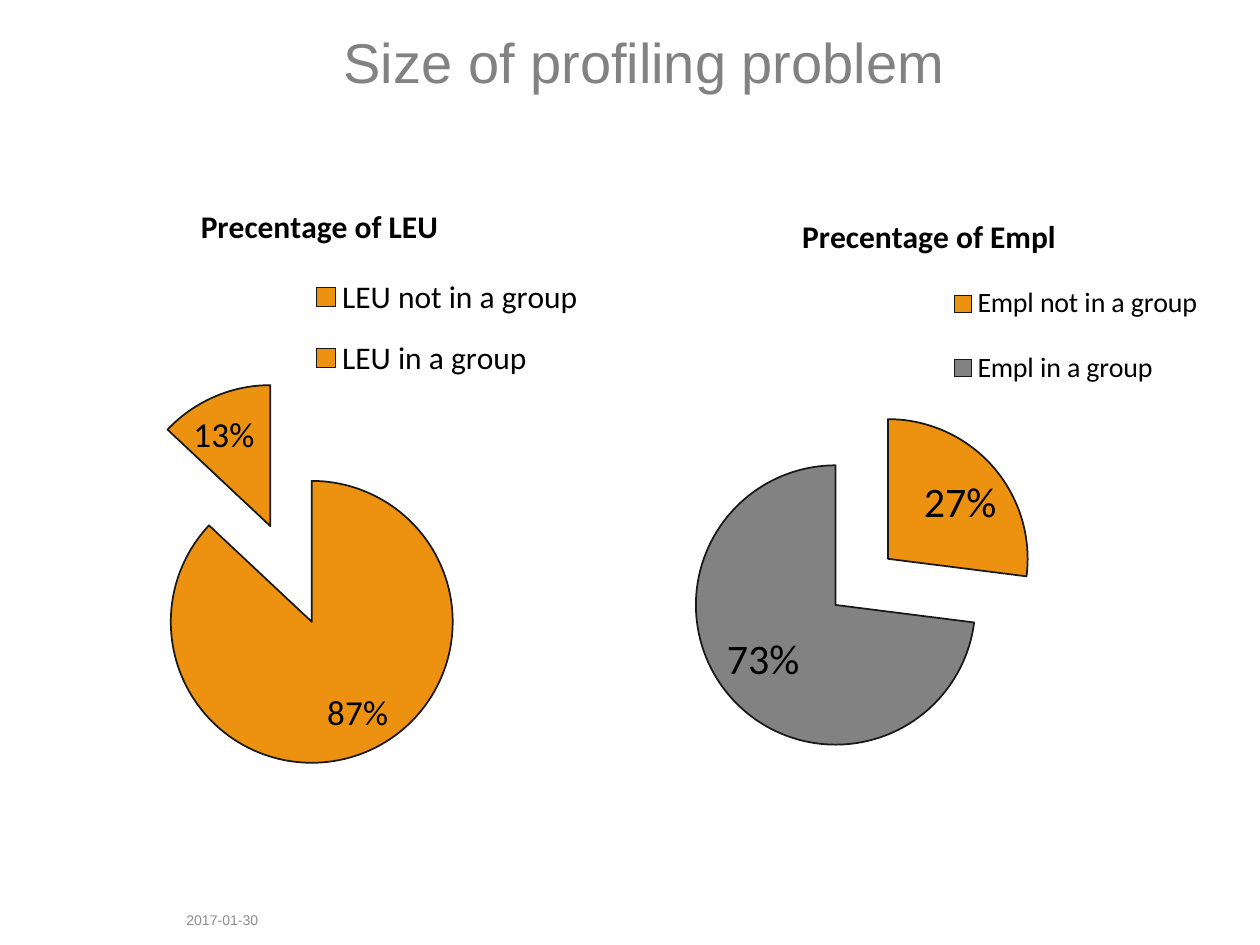
from dataclasses import dataclass

from lxml.etree import SubElement
from pptx import Presentation
from pptx.chart.data import CategoryChartData
from pptx.dml.color import RGBColor
from pptx.enum.chart import XL_CHART_TYPE, XL_LABEL_POSITION, XL_LEGEND_POSITION
from pptx.enum.text import MSO_ANCHOR, PP_ALIGN
from pptx.oxml import parse_xml
from pptx.oxml.ns import nsdecls, qn
from pptx.util import Pt


@dataclass(frozen=True)
class Theme:
    head: str = "Arial"
    body: str = "Calibri"
    orange: str = "EC9210"
    gray: str = "828282"
    pale: str = "8C8C8C"
    edge: str = "181818"
    black: str = "000000"
    title: int = 32
    label: int = 18
    base: int = 10
    small: int = 8


class Deck:
    def __init__(self, theme):
        self.theme = theme
        self.prs = Presentation()
        self.prs.slide_width, self.prs.slide_height = Pt(720), Pt(540)
        self.slide = self.prs.slides.add_slide(self.prs.slide_layouts[6])

    def style(self, font, size, color, name, bold=None):
        font.size, font.name, font.bold = Pt(size), name, bold
        font.color.rgb = RGBColor.from_string(color)

    def text(self, box, words, size, color, align=PP_ALIGN.LEFT):
        frame = self.slide.shapes.add_textbox(*map(Pt, box)).text_frame
        frame.word_wrap = True
        frame.vertical_anchor = MSO_ANCHOR.MIDDLE
        line = frame.paragraphs[0]
        line.text, line.alignment = words, align
        self.style(line.font, size, color, self.theme.head)

    def place(self, part, index, inner=False, **spots):
        """Set a manual layout, in fractions of the chart frame."""
        for old in part.findall(qn("c:layout")):
            part.remove(old)
        layout = parse_xml(f"<c:layout {nsdecls('c')}><c:manualLayout/></c:layout>")
        rules = {"layoutTarget": "inner"} if inner else {}
        rules |= {"xMode": "edge", "yMode": "edge"} | spots
        for tag, val in rules.items():
            SubElement(layout[0], qn("c:" + tag)).set("val", str(val))
        part.insert(index, layout)

    def burst(self, amount):
        return parse_xml(f'<c:explosion {nsdecls("c")} val="{amount}"/>')

    def edge(self, form):
        form.line.color.rgb = RGBColor.from_string(self.theme.edge)
        form.line.width = Pt(1)

    def pie(self, box, title, slices, burst, sizes, spots):
        look = self.theme
        data = CategoryChartData(number_format="0")
        data.categories = [name for name, *_ in slices]
        data.add_series(title, [val for _, val, *_ in slices])
        chart = self.slide.shapes.add_chart(
            XL_CHART_TYPE.PIE, *map(Pt, box), data).chart
        self.style(chart.font, look.base, look.black, look.body)

        # Title
        chart.has_title = True
        head = chart.chart_title
        line = head.text_frame.paragraphs[0]
        line.text = title
        self.style(line.font, look.label, look.black, look.body, True)
        head.include_in_layout = False

        # Legend
        chart.has_legend = True
        key = chart.legend
        key.position = XL_LEGEND_POSITION.RIGHT
        key.include_in_layout = False
        self.style(key.font, sizes["key"], look.black, look.body)

        # Slices
        plot = chart.plots[0]
        plot.vary_by_categories = True
        row = plot.series[0]
        self.edge(row.format)
        row._element.find(qn("c:spPr")).addnext(self.burst(burst))
        for i, (_, _, color, shift) in enumerate(slices):
            form = row.points[i].format
            form.fill.solid()
            form.fill.fore_color.rgb = RGBColor.from_string(color)
            self.edge(form)
            part = row._element.findall(qn("c:dPt"))[i]
            part.find(qn("c:spPr")).addprevious(self.burst(shift))

        # Percent labels
        plot.has_data_labels = True
        tags = plot.data_labels
        tags.show_percentage, tags.show_value = True, False
        tags.number_format, tags.number_format_is_linked = "0%", False
        tags.position = XL_LABEL_POSITION.BEST_FIT
        self.style(tags.font, sizes["tag"], look.black, look.body)

        # Layout
        self.place(head._element, 1, **spots["title"])
        self.place(key._element, 1, **spots["key"])
        self.place(plot._element.getparent(), 0, True, **spots["plot"])


def main():
    look = Theme()
    deck = Deck(look)

    # Heading
    deck.text((70.5, 9.4, 595.5, 51), "Size of profiling problem",
              look.title, look.gray, PP_ALIGN.CENTER)

    # Legal units
    deck.pie(
        (14.4, 100, 334.8, 459.4), "Precentage of LEU",
        [("LEU not in a group", 87, look.orange, 41),
         ("LEU in a group", 13, look.orange, 33)],
        87, {"key": 18, "tag": 20},
        {"title": {"x": 0.29, "y": 0.03},
         "key": {"x": 0.48, "y": 0.1, "w": 0.48, "h": 0.18},
         "plot": {"x": 0, "y": 0.16, "w": 0.9, "h": 0.66}})

    # Employees
    deck.pie(
        (360, 105.8, 339.8, 453.6), "Precentage of Empl",
        [("Empl not in a group", 27, look.orange, 25),
         ("Empl in a group", 73, look.gray, 25)],
        25, {"key": 16, "tag": 24},
        {"title": {"x": 0.28, "y": 0.03},
         "key": {"x": 0.53, "y": 0.09, "w": 0.44, "h": 0.2},
         "plot": {"x": 0.08, "y": 0.28, "w": 0.62, "h": 0.44}})

    # Date
    deck.text((99.4, 511.2, 104.4, 28.8), "2017-01-30", look.small, look.pale)

    deck.prs.save("out.pptx")


if __name__ == "__main__":
    main()
